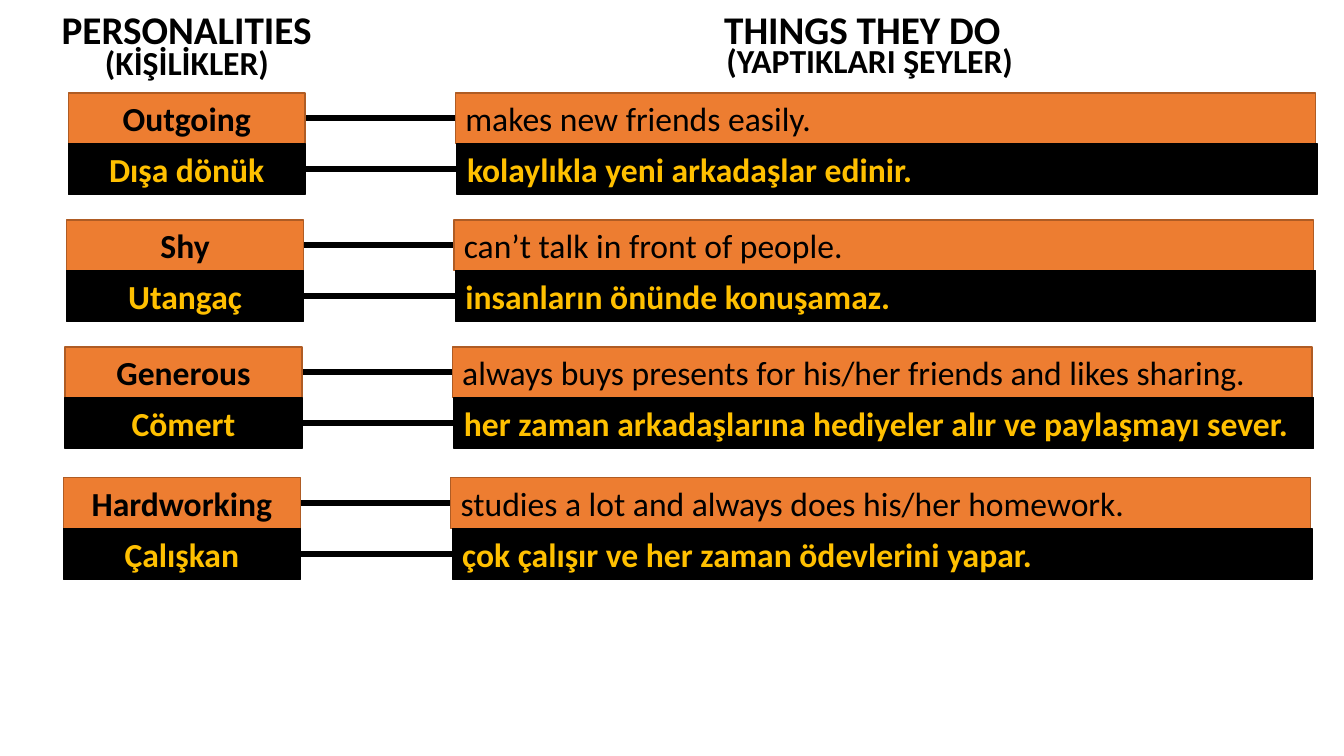
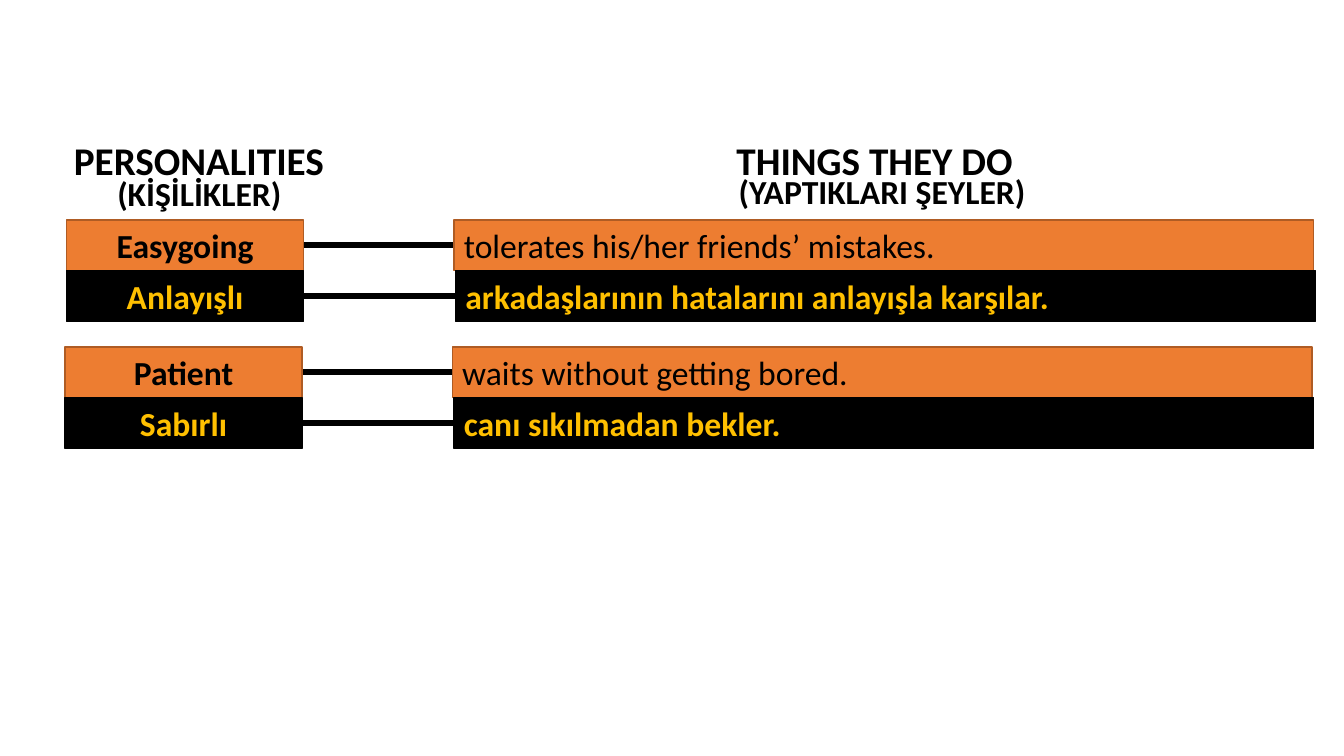
from pptx import Presentation
from pptx.dml.color import RGBColor
from pptx.enum.shapes import MSO_CONNECTOR, MSO_SHAPE
from pptx.enum.text import MSO_ANCHOR, MSO_AUTO_SIZE, PP_ALIGN
from pptx.oxml.ns import qn
from pptx.util import Cm, Pt
from lxml.etree import SubElement

BLACK = RGBColor(0x00, 0x00, 0x00)
ORANGE = RGBColor(0xED, 0x7D, 0x31)
BROWN = RGBColor(0xAF, 0x5C, 0x24)
GOLD = RGBColor(0xFF, 0xC0, 0x00)

ROW_HEIGHT = 1.28
NAME_WIDTH = 5.97
ACTION_OFFSET = 9.76
ACTION_WIDTH = 21.67
LINE_LENGTH = 3.83
STEP_LEFT = 0.04
PAIR_TOPS = [2.34, 5.54, 8.74, 12.04]

HEADINGS = [
    ("PERSONALITIES", 1.3, 0, 7.85, 1.45, 28, PP_ALIGN.LEFT),
    ("THINGS THEY DO", 18, 0, 7.85, 1.45, 28, PP_ALIGN.LEFT),
    ("(KİŞİLİKLER)", 0.79, 0.94, 7.85, 1.28, 24, PP_ALIGN.CENTER),
    ("(YAPTIKLARI ŞEYLER)", 17.45, 0.89, 8.94, 1.28, 24, PP_ALIGN.CENTER),
]

PAGES = [
    (0, 0, 0, [
        ("Outgoing", "makes new friends easily.",
         "Dışa dönük", "kolaylıkla yeni arkadaşlar edinir."),
        ("Shy", "can’t talk in front of people.",
         "Utangaç", "insanların önünde konuşamaz."),
        ("Generous", "always buys presents for his/her friends and likes sharing.",
         "Cömert", "her zaman arkadaşlarına hediyeler alır ve paylaşmayı sever."),
        ("Hardworking", "studies a lot and always does his/her homework.",
         "Çalışkan", "çok çalışır ve her zaman ödevlerini yapar."),
    ]),
    (0.31, 3.3, 1, [
        ("Easygoing", "tolerates his/her friends’ mistakes.",
         "Anlayışlı", "arkadaşlarının hatalarını anlayışla karşılar."),
        ("Patient", "waits without getting bored.",
         "Sabırlı", "canı sıkılmadan bekler."),
    ]),
]


def write_text(shape, text, size, color, bold, alignment, anchor):
    frame = shape.text_frame
    frame.word_wrap = True
    frame.auto_size = MSO_AUTO_SIZE.SHAPE_TO_FIT_TEXT
    frame.vertical_anchor = anchor
    para = frame.paragraphs[0]
    para.alignment = alignment
    span = para.add_run()
    span.text = text
    span.font.name = "Calibri"
    span.font.size = Pt(size)
    span.font.bold = bold
    span.font.color.rgb = color


def add_bar(page, left, top, width, text, fill, border, color, bold, alignment):
    bar = page.shapes.add_shape(
        MSO_SHAPE.RECTANGLE, Cm(left), Cm(top), Cm(width), Cm(ROW_HEIGHT))
    bar.shadow.inherit = False
    bar.fill.solid()
    bar.fill.fore_color.rgb = fill
    bar.line.color.rgb = border
    bar.line.width = Pt(1)
    write_text(bar, text, 24, color, bold, alignment, MSO_ANCHOR.MIDDLE)


deck = Presentation()
deck.slide_width = Cm(33.87)
deck.slide_height = Cm(19.05)

for shift_x, shift_y, first_pair, pairs in PAGES:
    page = deck.slides.add_slide(deck.slide_layouts[5])

    for number, (text, left, top, width, height, size, alignment) in enumerate(HEADINGS):
        place = Cm(left + shift_x), Cm(top + shift_y), Cm(width), Cm(height)
        if number == 0:
            heading = page.shapes.title
            heading.left, heading.top, heading.width, heading.height = place
        else:
            heading = page.shapes.add_textbox(*place)
        write_text(heading, text, size, BLACK, True, alignment, MSO_ANCHOR.TOP)

    for index, (name, action, turkish_name, turkish_action) in enumerate(pairs, first_pair):
        left = 1.72 - index * STEP_LEFT
        rows = [
            (name, action, ORANGE, BROWN, BLACK, False, 0),
            (turkish_name, turkish_action, BLACK, BLACK, GOLD, True, STEP_LEFT),
        ]
        for row, (label, sentence, fill, border, color, bold, nudge) in enumerate(rows):
            top = PAIR_TOPS[index] + row * ROW_HEIGHT
            middle = Cm(top + ROW_HEIGHT / 2)
            line_left = left + NAME_WIDTH
            link = page.shapes.add_connector(
                MSO_CONNECTOR.STRAIGHT,
                Cm(line_left), middle, Cm(line_left + LINE_LENGTH), middle)
            link.line.color.rgb = BLACK
            link.line.width = Pt(4.5)
            SubElement(link._element.spPr, qn("a:effectLst"))
            add_bar(page, left, top, NAME_WIDTH, label,
                    fill, border, color, True, PP_ALIGN.CENTER)
            add_bar(page, left + ACTION_OFFSET + nudge, top, ACTION_WIDTH, sentence,
                    fill, border, color, bold, PP_ALIGN.LEFT)

deck.save("out.pptx")
